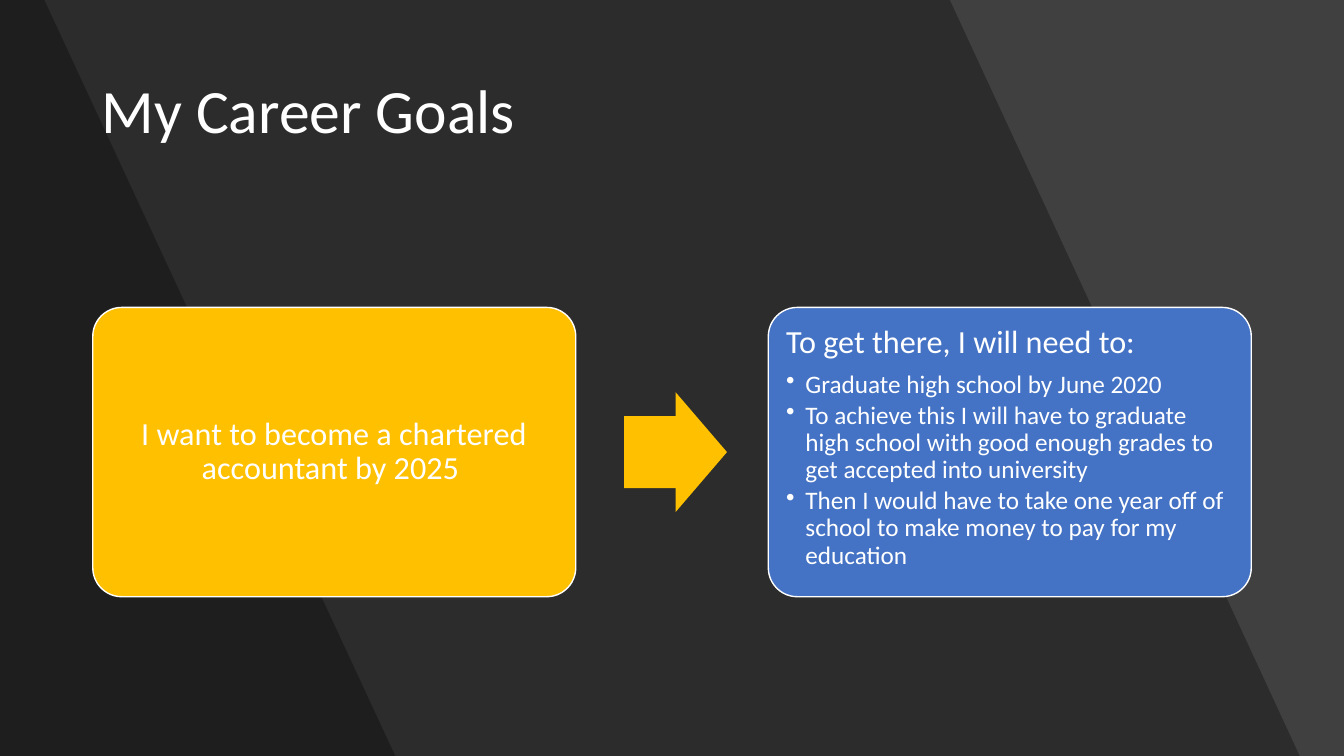
from dataclasses import dataclass

from lxml import etree
from pptx import Presentation
from pptx.dml.color import RGBColor
from pptx.enum.shapes import MSO_SHAPE
from pptx.enum.text import MSO_ANCHOR, PP_ALIGN
from pptx.oxml.ns import qn
from pptx.util import Inches, Pt

ROUNDED, ARROW = MSO_SHAPE.ROUNDED_RECTANGLE, MSO_SHAPE.RIGHT_ARROW
TOP, MIDDLE = MSO_ANCHOR.TOP, MSO_ANCHOR.MIDDLE
LEFT, CENTER = PP_ALIGN.LEFT, PP_ALIGN.CENTER

BLACK = RGBColor(0x00, 0x00, 0x00)
GREY = RGBColor(0x40, 0x40, 0x40)
WHITE = RGBColor(0xFF, 0xFF, 0xFF)
GOLD = RGBColor(0xFF, 0xC0, 0x00)
BLUE = RGBColor(0x44, 0x72, 0xC4)

FONT = "Calibri"
WIDTH, HEIGHT = 13.33, 7.5
CARD_TOP, CARD_W, CARD_H = 3.05, 4.79, 2.87
CARD_PAD = 0.08


@dataclass
class Line:
    text: str
    size: float
    after: float = 0
    align: PP_ALIGN = LEFT
    bullet: bool = False


@dataclass
class Card:
    left: float
    color: RGBColor
    anchor: MSO_ANCHOR
    lines: list[Line]


BANDS = [(9.42, 12.89), (0.44, 3.92)]  # right edge at the top and at the bottom
STEPS = [
    "Graduate high school by June 2020",
    "To achieve this I will have to graduate high school with good enough "
    "grades to get accepted into university",
    "Then I would have to take one year off of school to make money to pay "
    "for my education",
]
CARDS = [
    Card(0.92, GOLD, MIDDLE,
         [Line("I want to become a chartered accountant by 2025 ", 23, 8, CENTER)]),
    Card(7.62, BLUE, TOP,
         [Line("To get there, I will need to:", 23, 8)]
         + [Line(step, 18, 2.7, bullet=True) for step in STEPS]),
]


def add_band(s, top_x: float, bottom_x: float) -> None:
    builder = s.shapes.build_freeform(0, 0)
    builder.add_line_segments([
        (Inches(top_x), 0), (Inches(bottom_x), Inches(HEIGHT)), (0, Inches(HEIGHT))])
    sp = builder.convert_to_shape()
    sp.shadow.inherit = False
    sp.fill.solid()
    sp.fill.fore_color.rgb = BLACK
    sp.line.fill.background()
    color = sp.fill._xPr.find(qn("a:solidFill"))[0]
    etree.SubElement(color, qn("a:alpha"), val="30000")


def add_block(s, kind: MSO_SHAPE, box: tuple, color: RGBColor,
              adjustments: tuple, outlined: bool = False) -> None:
    sp = s.shapes.add_shape(kind, *map(Inches, box))
    sp.shadow.inherit = False
    for i, value in enumerate(adjustments):
        sp.adjustments[i] = value
    sp.fill.solid()
    sp.fill.fore_color.rgb = color
    if outlined:
        sp.line.color.rgb = WHITE
        sp.line.width = Pt(1)
    else:
        sp.line.fill.background()


def add_text(s, box: tuple, lines: list[Line], anchor: MSO_ANCHOR,
             inset_y: float) -> None:
    tf = s.shapes.add_textbox(*map(Inches, box)).text_frame
    tf.word_wrap = True
    tf.vertical_anchor = anchor
    tf.margin_left = tf.margin_right = Inches(0.1)
    tf.margin_top = tf.margin_bottom = Inches(inset_y)
    for i, line in enumerate(lines):
        p = tf.add_paragraph() if i else tf.paragraphs[0]
        p.text = line.text
        p.alignment = line.align
        p.line_spacing = 0.9
        p.space_after = Pt(line.after)
        p.font.name = FONT
        p.font.size = Pt(line.size)
        p.font.color.rgb = WHITE
        if line.bullet:
            p.level = 1
            pPr = p._p.get_or_add_pPr()
            pPr.set("marL", str(Inches(0.19)))
            pPr.set("indent", str(-Inches(0.19)))
            bullet = etree.Element(qn("a:buChar"), char="•")
            pPr.find(qn("a:defRPr")).addprevious(bullet)


def add_card(s, card: Card) -> None:
    add_block(s, ROUNDED, (card.left, CARD_TOP, CARD_W, CARD_H), card.color,
              (0.1,), outlined=True)
    text_box = (card.left + CARD_PAD, CARD_TOP + CARD_PAD,
                CARD_W - 2 * CARD_PAD, CARD_H - 2 * CARD_PAD)
    add_text(s, text_box, card.lines, card.anchor, 0.1)


def main() -> None:
    prs = Presentation()
    prs.slide_width, prs.slide_height = Inches(WIDTH), Inches(HEIGHT)
    s = prs.slides.add_slide(prs.slide_layouts[6])

    # Background with slanted bands
    s.background.fill.solid()
    s.background.fill.fore_color.rgb = GREY
    for top_x, bottom_x in BANDS:
        add_band(s, top_x, bottom_x)

    # Title
    add_text(s, (0.91, 0.4, 11.51, 1.45), [Line("My Career Goals", 44)], MIDDLE, 0.05)

    # Goal, arrow and steps
    for card in CARDS:
        add_card(s, card)
    add_block(s, ARROW, (6.19, 3.89, 1.02, 1.19), GOLD, (0.6, 0.5))

    prs.save("out.pptx")


if __name__ == "__main__":
    main()
